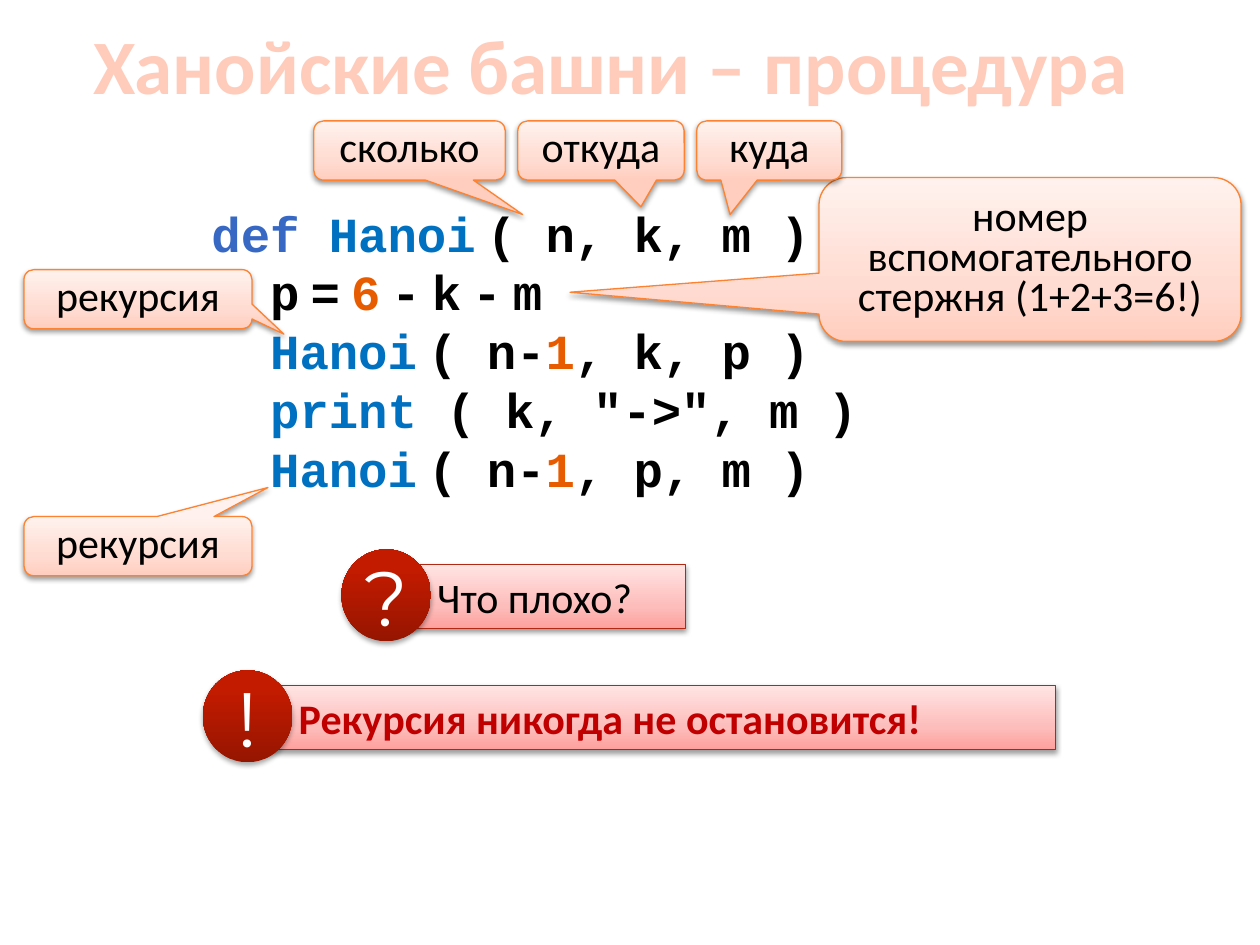
from copy import deepcopy
from dataclasses import dataclass

from lxml.etree import SubElement
from pptx import Presentation
from pptx.dml.color import RGBColor
from pptx.enum.shapes import MSO_SHAPE
from pptx.enum.text import MSO_ANCHOR, PP_ALIGN
from pptx.oxml.ns import qn
from pptx.util import Inches, Pt

HUES = {
    "title": "FFCCBB", "black": "000000", "white": "FFFFFF", "key": "3668C4",
    "name": "0070C0", "digit": "E75C01", "alert": "C00000",
    "edge": "FD8231", "rim": "B32812",
}
PEACH = ((0, "FFCEBF"), (0.35, "FFDCD2"), (1, "FFF2EE"))
ROSE = ((0, "FEA09D"), (0.35, "FDBDBB"), (1, "FFE5E4"))
RED = ((0, "961500"), (0.8, "C31B00"), (1, "C41B00"))
SANS, MONO, SIGN = "Calibri", "Courier New", "Montserrat"
GAP = (" ", "black", SANS)


@dataclass
class Call:
    text: str
    box: tuple
    tip: tuple


@dataclass
class Note:
    sign: str
    text: str
    box: tuple
    hue: str
    bold: bool


CALLS = [
    Call("номер вспомогательного стержня (1+2+3=6!)", (6.5, 1.41, 3.35, 1.3), (-1.09, 0.2)),
    Call("сколько", (2.49, 0.96, 1.52, 0.47), (0.59, 1.08)),
    Call("откуда", (4.11, 0.96, 1.32, 0.47), (0.24, 0.95)),
    Call("куда", (5.53, 0.96, 1.15, 0.47), (-0.27, 1.08)),
    Call("рекурсия", (0.19, 2.14, 1.81, 0.47), (0.64, 0.59)),
    Call("рекурсия", (0.19, 4.1, 1.81, 0.47), (0.57, -0.99)),
]
NOTES = [
    Note("?", "Что плохо?", (3.22, 4.48, 2.22, 0.51), "black", False),
    Note("!", "Рекурсия никогда не остановится!", (2.12, 5.44, 6.26, 0.51), "alert", True),
]


def step(args: str) -> list:
    return [("  ", "black"), ("Hanoi", "name"), GAP, ("( n-", "black"),
            ("1", "digit"), (f", {args} )", "black")]


def sums() -> list:
    row = [("  p", "black")]
    for word, hue in (("=", "black"), ("6", "digit"), ("-", "black"),
                      ("k", "black"), ("-", "black"), ("m", "black")):
        row += [GAP, (word, hue)]
    return row


CODE = [
    [("def ", "key"), ("Hanoi", "name"), GAP, ("( n, k, m ):", "black")],
    sums(),
    step("k, p"),
    [("  ", "black"), ("print", "name"), (' ( k, "->", m )', "black")],
    step("p, m"),
]


def put(part, vals: dict) -> None:
    for key, val in vals.items():
        setattr(part, key, val)


def place(box: tuple) -> list:
    return [Inches(val) for val in box]


def write(para, text: str, hue: str, font: str = SANS, size: int = 24,
          bold: bool = False) -> None:
    run = para.add_run()
    run.text = text
    put(run.font, {"name": font, "size": Pt(size), "bold": bold})
    run.font.color.rgb = RGBColor.from_string(HUES[hue])


def blend(shape, stops: tuple) -> None:
    fill = shape.fill
    fill.gradient()
    fill.gradient_angle = 90
    last = shape.element.spPr.find(qn("a:gradFill")).find(qn("a:gsLst"))
    last.append(deepcopy(last[-1]))
    for stop, (spot, hue) in zip(fill.gradient_stops, stops):
        stop.position = spot
        stop.color.rgb = RGBColor.from_string(hue)


def shade(shape, depth: int, drop: float) -> None:
    shape.shadow.inherit = False
    list_ = shape.element.spPr.find(qn("a:effectLst"))
    cast = SubElement(list_, qn("a:outerShdw"), blurRad=str(Pt(3.1)),
                      dist=str(Pt(drop)), dir="5400000", rotWithShape="0")
    tone = SubElement(cast, qn("a:srgbClr"), val=HUES["black"])
    SubElement(tone, qn("a:alpha"), val=str(depth * 1000))


def form(shapes, kind, box: tuple, stops: tuple, edge: str = "",
         depth: int = 38, drop: float = 1.6):
    shape = shapes.add_shape(kind, *place(box))
    blend(shape, stops)
    if edge:
        shape.line.color.rgb = RGBColor.from_string(HUES[edge])
        shape.line.width = Pt(0.75)
    else:
        shape.line.fill.background()
    shade(shape, depth, drop)
    put(shape.text_frame, {"word_wrap": True, "vertical_anchor": MSO_ANCHOR.MIDDLE})
    return shape


def draw_call(shapes, call: Call) -> None:
    shape = form(shapes, MSO_SHAPE.ROUNDED_RECTANGULAR_CALLOUT, call.box, PEACH, "edge")
    for spot, val in enumerate((*call.tip, 0.167)):
        shape.adjustments[spot] = val
    para = shape.text_frame.paragraphs[0]
    put(para, {"alignment": PP_ALIGN.CENTER, "line_spacing": 0.8})
    write(para, call.text, "black")


def draw_note(shapes, note: Note) -> None:
    group = shapes.add_group_shape().shapes
    bar = form(group, MSO_SHAPE.RECTANGLE, note.box, ROSE, "rim")
    bar.text_frame.margin_left = Inches(0.25)
    para = bar.text_frame.paragraphs[0]
    para.alignment = PP_ALIGN.LEFT
    write(para, note.text, note.hue, bold=note.bold)
    left, top = note.box[:2]
    disc = form(group, MSO_SHAPE.OVAL, (left - 0.51, top - 0.12, 0.71, 0.73), RED,
                depth=35, drop=1.8)
    disc.text_frame.word_wrap = False
    para = disc.text_frame.paragraphs[0]
    para.alignment = PP_ALIGN.CENTER
    write(para, note.sign, "white", SIGN, 44)


def draw_title(shapes) -> None:
    frame = shapes.add_textbox(*place((0, 0.16, 9.84, 0.69))).text_frame
    put(frame, {"word_wrap": True, "vertical_anchor": MSO_ANCHOR.MIDDLE,
                "margin_right": Inches(0.24)})
    para = frame.paragraphs[0]
    para.alignment = PP_ALIGN.CENTER
    write(para, "Ханойские башни – процедура", "title", SANS, 44, True)


def draw_code(shapes) -> None:
    frame = shapes.add_textbox(*place((1.48, 1.55, 6.58, 2.46))).text_frame
    put(frame, {"word_wrap": True, "vertical_anchor": MSO_ANCHOR.MIDDLE})
    for spot, row in enumerate(CODE):
        para = frame.add_paragraph() if spot else frame.paragraphs[0]
        para.alignment = PP_ALIGN.JUSTIFY
        props = para._p.get_or_add_pPr()
        props.set("marL", str(Inches(0.2)))
        props.set("indent", str(Inches(-0.1)))
        for text, hue, *font in row:
            write(para, text, hue, font[0] if font else MONO, 28, True)


def main() -> None:
    deck = Presentation()
    put(deck, {"slide_width": Inches(10), "slide_height": Inches(7.5)})
    shapes = deck.slides.add_slide(deck.slide_layouts[6]).shapes
    draw_title(shapes)
    draw_code(shapes)
    for call in CALLS:
        draw_call(shapes, call)
    for note in NOTES:
        draw_note(shapes, note)
    deck.save("out.pptx")


if __name__ == "__main__":
    main()
